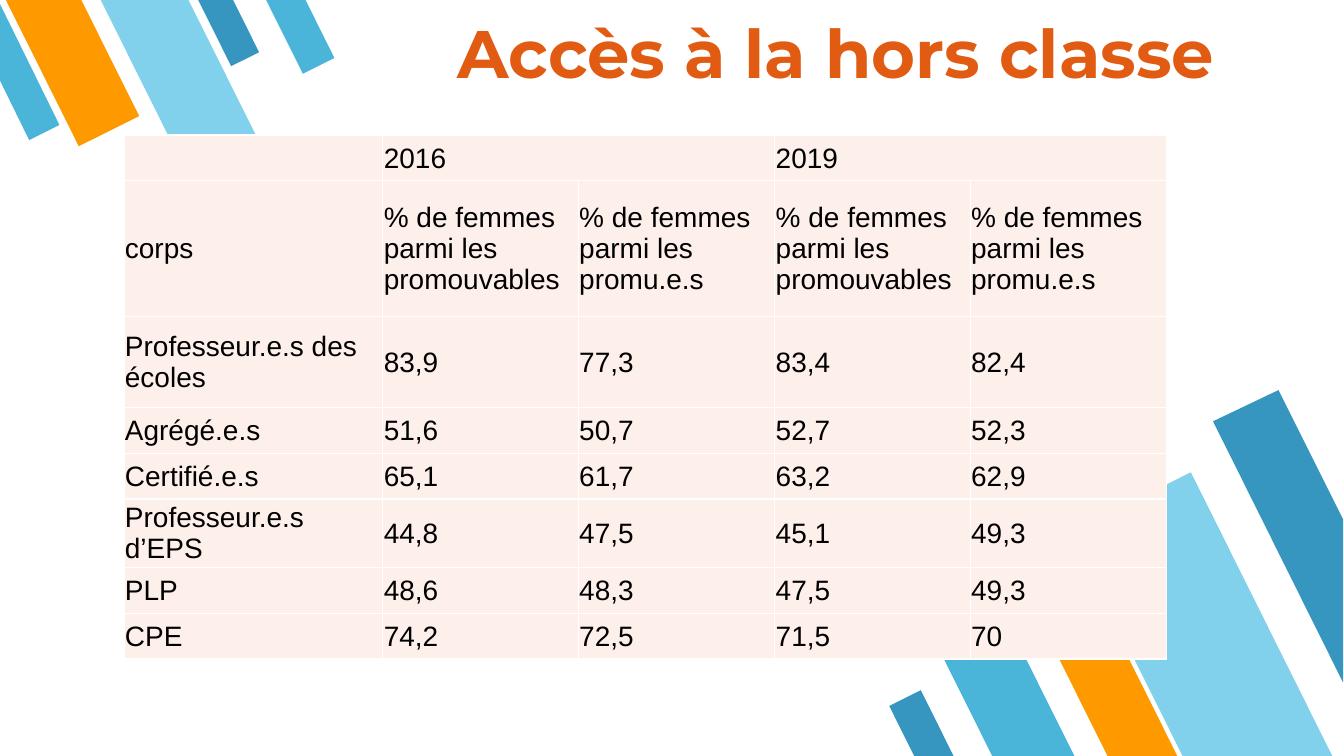
from lxml import etree
from pptx import Presentation
from pptx.dml.color import RGBColor
from pptx.enum.shapes import MSO_SHAPE
from pptx.enum.text import MSO_ANCHOR, PP_ALIGN
from pptx.oxml.ns import qn
from pptx.util import Pt

PX = 9144  # EMU; 100 px to the inch
STRIPE = MSO_SHAPE.FLOWCHART_MANUAL_INPUT
MIDDLE = MSO_ANCHOR.MIDDLE
CENTER = PP_ALIGN.CENTER

NAVY, BLUE, SKY, AMBER = "3796BF", "4BB5D9", "81D1EC", "FF9900"
RUST, CREAM, WHITE, BLACK = "E15C12", "FDEFE9", "FFFFFF", "000000"

# Stripes: left, top, width, height, colour, relative to the corner box
LOWER = [
    (62, 218, 73, 181, BLUE),
    (229, 94, 133, 327, SKY),
    (181, 243, 62, 152, AMBER),
    (0, 301, 35, 86, NAVY),
]
LOWER_CUT = [(369, 0), (304, 31), (433, 290), (433, 128)]
UPPER = [
    (210, -17, 31, 80, NAVY),
    (37, -30, 67, 169, AMBER),
    (137, -33, 78, 196, SKY),
    (279, -19, 35, 89, BLUE),
]
UPPER_CUT = [(29, 139), (59, 124), (0, 4), (0, 80)]

COLS = [257, 194, 195, 194, 195]
ROWS = [45, 135, 90, 46, 45, 62, 46, 45]
HEADS = ["% de femmes parmi les promouvables", "% de femmes parmi les promu.e.s"]
DATA = [
    ["", "2016", "", "2019", ""],
    ["corps"] + HEADS * 2,
    ["Professeur.e.s des écoles", "83,9", "77,3", "83,4", "82,4"],
    ["Agrégé.e.s", "51,6", "50,7", "52,7", "52,3"],
    ["Certifié.e.s", "65,1", "61,7", "63,2", "62,9"],
    ["Professeur.e.s d’EPS", "44,8", "47,5", "45,1", "49,3"],
    ["PLP", "48,6", "48,3", "47,5", "49,3"],
    ["CPE", "74,2", "72,5", "71,5", "70"],
]


def rgb(color):
    return RGBColor.from_string(color)


def emu(*sizes):
    return [size * PX for size in sizes]


def paint(shape, color):
    shape.shadow.inherit = False
    shape.fill.solid()
    shape.fill.fore_color.rgb = rgb(color)
    shape.line.fill.background()


def add_run(para, text, font, size, color, bold=False):
    run = para.add_run()
    run.text = text
    run.font.name = font
    run.font.size = Pt(size)
    run.font.color.rgb = rgb(color)
    run.font.bold = bold


def add_corner(slide, left, top, stripes, turn, cut, color):
    """Draw slanted stripes and the one cut off by the slide edge."""
    for x, y, wide, high, tint in stripes:
        shape = slide.shapes.add_shape(STRIPE, *emu(left + x, top + y, wide, high))
        shape.rotation = turn
        shape._element.spPr.find(qn("a:xfrm")).set("flipH", "1")
        paint(shape, tint)
    points = [(left + x, top + y) for x, y in cut]
    form = slide.shapes.build_freeform(*points[0], scale=PX)
    form.add_line_segments(points[1:], close=True)
    paint(form.convert_to_shape(), color)


def add_title(slide, left, top, wide, high):
    frame = slide.shapes.add_textbox(*emu(left, top, wide, high)).text_frame
    frame.word_wrap = True
    para = frame.paragraphs[0]
    para.alignment = CENTER
    add_run(para, "Accès à la hors classe", "Montserrat", 48, RUST, True)


def add_edges(cell):
    props = cell._tc.get_or_add_tcPr()
    for spot, side in enumerate(("lnL", "lnR", "lnT", "lnB")):
        line = etree.Element(qn(f"a:{side}"), w=str(Pt(1)))
        fill = etree.SubElement(line, qn("a:solidFill"))
        etree.SubElement(fill, qn("a:srgbClr"), val=WHITE)
        props.insert(spot, line)


def fill_cell(cell, text):
    cell.fill.solid()
    cell.fill.fore_color.rgb = rgb(CREAM)
    cell.vertical_anchor = MIDDLE
    cell.margin_left = cell.margin_right = cell.margin_top = PX
    cell.margin_bottom = 0
    add_edges(cell)
    if text:
        add_run(cell.text_frame.paragraphs[0], text, "Arial", 20, BLACK)


def add_rates(slide, left, top):
    """Place the table of promotion rates by body and year."""
    box = emu(left, top, sum(COLS), sum(ROWS))
    table = slide.shapes.add_table(len(ROWS), len(COLS), *box).table
    table.first_row = table.horz_banding = False
    for col, wide in zip(table.columns, COLS):
        col.width = wide * PX
    for row, high, texts in zip(table.rows, ROWS, DATA):
        row.height = high * PX
        for cell, text in zip(row.cells, texts):
            fill_cell(cell, text)
    for year in (1, 3):
        table.cell(0, year).merge(table.cell(0, year + 1))


def main():
    deck = Presentation()
    deck.slide_width, deck.slide_height = emu(1334, 750)
    slide = deck.slides.add_slide(deck.slide_layouts[6])
    add_corner(slide, 900, 387, LOWER, 153.5, LOWER_CUT, NAVY)
    add_corner(slide, 0, 0, UPPER, 333.5, UPPER_CUT, BLUE)
    add_title(slide, 390, 6, 880, 114)
    add_rates(slide, 123, 134)
    deck.save("out.pptx")


if __name__ == "__main__":
    main()
